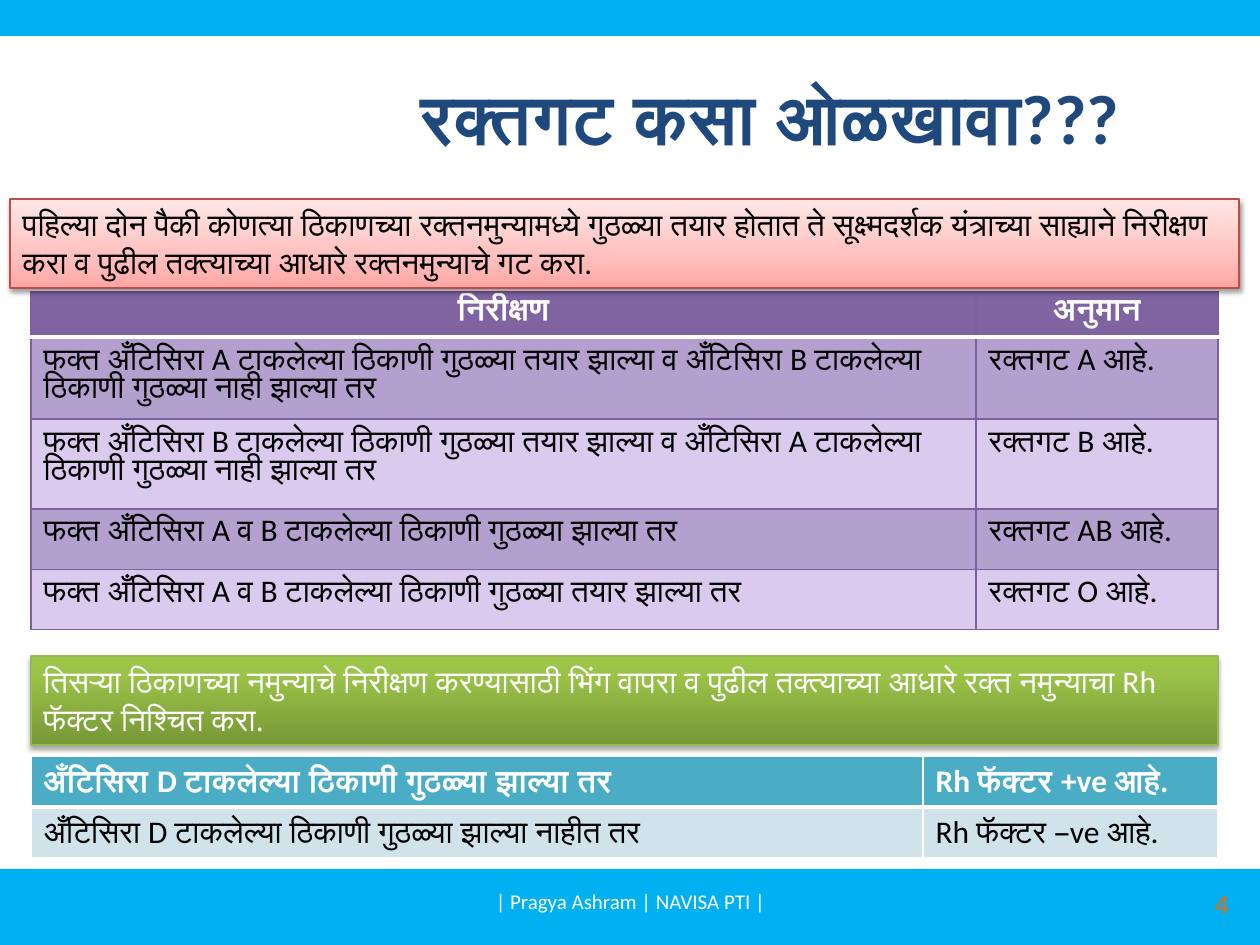
from copy import deepcopy

from lxml.etree import SubElement
from pptx import Presentation
from pptx.dml.color import RGBColor
from pptx.enum.shapes import MSO_SHAPE
from pptx.enum.text import MSO_ANCHOR, PP_ALIGN
from pptx.oxml.ns import qn
from pptx.util import Emu, Pt

PX_PER_INCH = 126
SKY, WHITE, BLACK = "00B0F0", "FFFFFF", "000000"
PURPLE, PURPLE_EDGE, LILAC_DARK, LILAC = "8064A2", "7D60A0", "B3A0CE", "D9CAEE"
TEAL, TEAL_LIGHT = "4BACC6", "D0E3EA"

OBSERVATIONS = [
    ("निरीक्षण", "अनुमान"),
    ("फक्त अँटिसिरा A टाकलेल्या ठिकाणी गुठळ्या तयार झाल्या व अँटिसिरा B टाकलेल्या "
     "ठिकाणी गुठळ्या नाही झाल्या तर", "रक्तगट A आहे."),
    ("फक्त अँटिसिरा B टाकलेल्या ठिकाणी गुठळ्या तयार झाल्या व अँटिसिरा A टाकलेल्या "
     "ठिकाणी गुठळ्या नाही झाल्या तर", "रक्तगट B आहे."),
    ("फक्त अँटिसिरा A व B टाकलेल्या ठिकाणी गुठळ्या झाल्या तर", "रक्तगट AB आहे."),
    ("फक्त अँटिसिरा A व B टाकलेल्या ठिकाणी गुठळ्या तयार झाल्या तर", "रक्तगट O आहे."),
]
RH_FACTORS = [
    ("अँटिसिरा D टाकलेल्या ठिकाणी गुठळ्या झाल्या तर", "Rh फॅक्टर +ve आहे."),
    ("अँटिसिरा D टाकलेल्या ठिकाणी गुठळ्या झाल्या नाहीत तर", "Rh फॅक्टर –ve आहे."),
]


def px(length):
    return Emu(round(length * 914400 / PX_PER_INCH))


def rgb(color):
    return RGBColor.from_string(color)


def write(frame, text, size=18, color=BLACK, bold=False, align=PP_ALIGN.LEFT,
          anchor=None, spacing=None):
    paragraph = frame.paragraphs[0]
    paragraph.alignment = align
    paragraph.line_spacing = spacing
    if anchor is not None:
        frame.vertical_anchor = anchor
    run = paragraph.add_run()
    run.text = text
    run.font.name = "Calibri"
    run.font.size = Pt(size)
    run.font.bold = bold
    run.font.color.rgb = rgb(color)


def add_title(slide, text):
    title = slide.shapes.title
    title.left, title.top, title.width, title.height = map(px, (323, 38, 893, 158))
    write(title.text_frame, text, size=40, color="1F497D", bold=True,
          align=PP_ALIGN.CENTER, anchor=MSO_ANCHOR.MIDDLE)


def add_box(slide, left, top, width, height):
    box = slide.shapes.add_shape(MSO_SHAPE.RECTANGLE, *map(px, (left, top, width, height)))
    box.shadow.inherit = False
    return box


def add_band(slide, top, height):
    band = add_box(slide, 0, top, 1260, height)
    band.fill.solid()
    band.fill.fore_color.rgb = rgb(SKY)
    band.line.fill.background()


def add_label(slide, left, top, width, height, text, **text_format):
    label = slide.shapes.add_textbox(*map(px, (left, top, width, height)))
    label.text_frame.word_wrap = True
    write(label.text_frame, text, anchor=MSO_ANCHOR.MIDDLE, **text_format)


def add_banner(slide, left, top, width, text, stops, edge, color, shadow_alpha):
    """Add an instruction box whose gradient runs from bottom to top."""
    banner = add_box(slide, left, top, width, 89)
    banner.line.color.rgb = rgb(edge)
    banner.line.width = Pt(0.75)

    banner.fill.gradient()
    banner.fill.gradient_angle = 90
    properties = banner.element.spPr
    stop_list = properties.find(".//" + qn("a:gsLst"))
    stop_list.append(deepcopy(stop_list[-1]))
    for stop, (position, stop_color) in zip(banner.fill.gradient_stops, stops):
        stop.position = position
        stop.color.rgb = rgb(stop_color)

    shadow = SubElement(properties.find(qn("a:effectLst")), qn("a:outerShdw"),
                        blurRad=str(Pt(3.1)), dist=str(Pt(1.7)), dir="5400000",
                        rotWithShape="0")
    shade = SubElement(shadow, qn("a:srgbClr"), val=BLACK)
    SubElement(shade, qn("a:alpha"), val=str(shadow_alpha * 1000))

    banner.text_frame.word_wrap = True
    write(banner.text_frame, text, color=color, anchor=MSO_ANCHOR.TOP)


def set_border(cell, side, color, points):
    line = SubElement(cell._tc.get_or_add_tcPr(), qn("a:ln" + side), w=str(Pt(points)))
    SubElement(SubElement(line, qn("a:solidFill")), qn("a:srgbClr"), val=color)


def add_table(slide, top, widths, heights, rows, fills, edge, edge_width, header_rule,
              header_align=PP_ALIGN.LEFT, spacing=None):
    """Add a table; fills holds one colour a row, header_rule is the white line's width."""
    table = slide.shapes.add_table(
        len(rows), len(widths), *map(px, (31, top, sum(widths), sum(heights)))).table
    for column, width in zip(table.columns, widths):
        column.width = px(width)
    for row_index, (texts, fill, height) in enumerate(zip(rows, fills, heights)):
        table.rows[row_index].height = px(height)
        header = row_index == 0
        for column_index, text in enumerate(texts):
            cell = table.cell(row_index, column_index)
            for side in "LRTB":
                ruled = (row_index, side) in ((0, "B"), (1, "T"))
                set_border(cell, side, WHITE if ruled else edge,
                           header_rule if ruled else edge_width)
            cell.fill.solid()
            cell.fill.fore_color.rgb = rgb(fill)
            write(cell.text_frame, text, color=WHITE if header else BLACK, bold=header,
                  align=header_align if header else PP_ALIGN.LEFT, spacing=spacing)


def main():
    deck = Presentation()
    deck.slide_width, deck.slide_height = px(1260), px(945)
    slide = deck.slides.add_slide(deck.slide_layouts[5])

    add_band(slide, 869, 76)
    add_band(slide, 0, 36)
    add_title(slide, "रक्तगट कसा ओळखावा???")
    add_table(slide, 292, (945, 242), (45, 82, 90, 61, 60), OBSERVATIONS,
              (PURPLE, LILAC_DARK, LILAC, LILAC_DARK, LILAC), PURPLE_EDGE, 0.75, 2,
              header_align=PP_ALIGN.CENTER, spacing=0.87)
    add_label(slide, 431, 876, 399, 50, "| Pragya Ashram | NAVISA PTI |",
              size=12, color=WHITE, align=PP_ALIGN.CENTER)
    add_label(slide, 948, 878, 293, 50, "4",
              size=16, color="E46C0A", align=PP_ALIGN.RIGHT)
    add_table(slide, 756, (892, 295), (51, 51), RH_FACTORS, (TEAL, TEAL_LIGHT), WHITE, 1, 3)
    add_banner(slide, 31, 656, 1187,
               "तिसऱ्या ठिकाणच्या नमुन्याचे निरीक्षण करण्यासाठी भिंग वापरा व पुढील तक्त्याच्या "
               "आधारे रक्त नमुन्याचा Rh फॅक्टर निश्चित करा.",
               ((0, "779737"), (0.8, "9BC348"), (1, "9DC746")), "98B955", WHITE, 35)
    add_banner(slide, 10, 199, 1229,
               "पहिल्या दोन पैकी कोणत्या ठिकाणच्या रक्तनमुन्यामध्ये गुठळ्या तयार होतात ते "
               "सूक्ष्मदर्शक यंत्राच्या साह्याने निरीक्षण करा व पुढील तक्त्याच्या आधारे "
               "रक्तनमुन्याचे गट करा.",
               ((0, "FFA6A5"), (0.35, "FFC0BF"), (1, "FFE7E7")), "BF4C48", BLACK, 38)
    deck.save("out.pptx")


if __name__ == "__main__":
    main()
